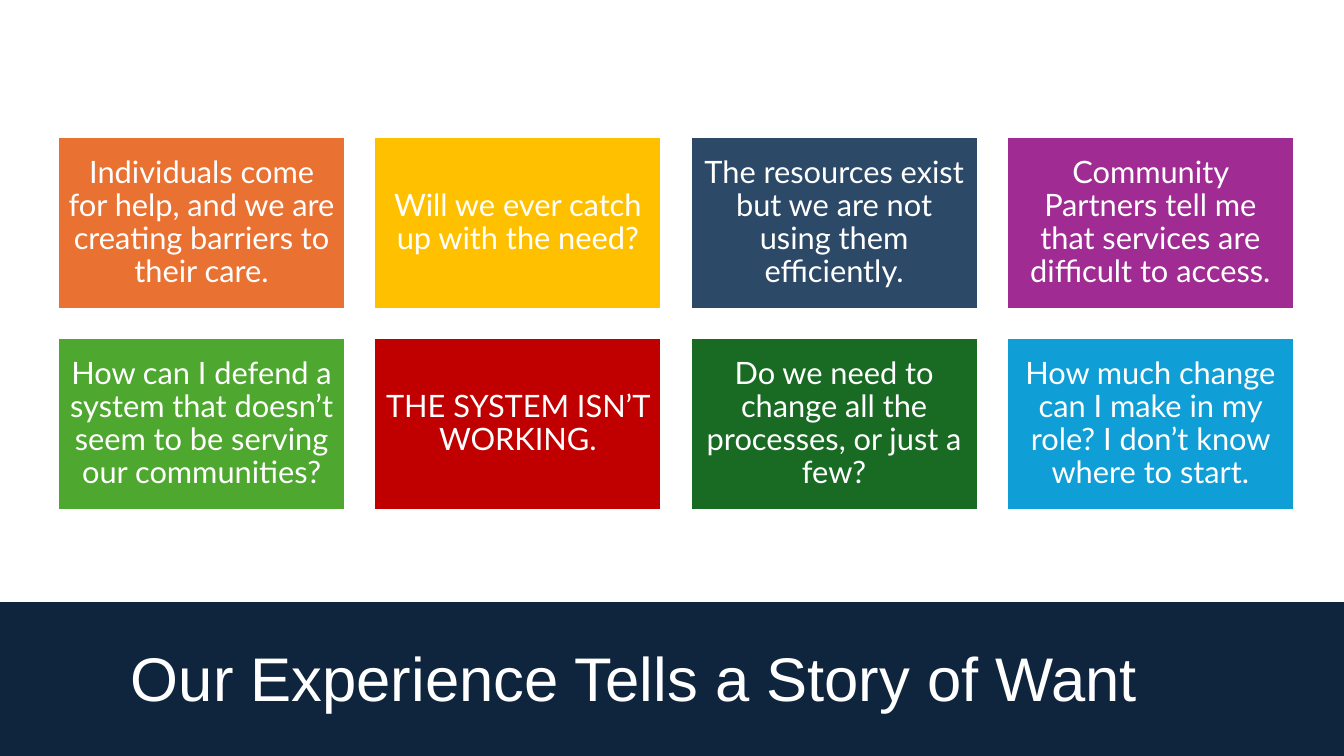
from pptx import Presentation, util as u
from pptx.dml.color import RGBColor
from pptx.enum import shapes, text

PX = 914400 / 100.8  # EMU in one px
SLIDE_W, SLIDE_H = 1344, 756
COLOURS = {
    "navy": "0F253E", "white": "FFFFFF",
    "orange": "E97132", "yellow": "FFC000", "slate": "2C4968", "purple": "A02B93",
    "lime": "4EA72E", "red": "C00000", "forest": "196B24", "sky": "0F9ED5",
}
CONCERNS = [
    ("orange", "Individuals come for help, and we are creating barriers to their care."),
    ("yellow", "Will we ever catch up with the need?"),
    ("slate", "The resources exist but we are not using them efficiently."),
    ("purple", "Community Partners tell me that services are difficult to access."),
    ("lime", "How can I defend a system that doesn’t seem to be serving our communities?"),
    ("red", "THE SYSTEM ISN’T WORKING."),
    ("forest", "Do we need to change all the processes, or just a few?"),
    ("sky", "How much change can I make in my role? I don’t know where to start."),
]


def px(length):
    return u.Emu(round(length * PX))


def colour(name):
    return RGBColor.from_string(COLOURS[name])


def write(shape, words, *, font, size, align, anchor, inset, fill="white"):
    frame = shape.text_frame
    frame.word_wrap = True
    frame.auto_size = text.MSO_AUTO_SIZE.NONE
    frame.vertical_anchor = anchor
    frame.margin_left = frame.margin_right = px(inset)
    frame.margin_top = frame.margin_bottom = px(inset)
    paragraph = frame.paragraphs[0]
    paragraph.alignment = align
    paragraph.line_spacing = 0.9
    run = paragraph.add_run()
    run.text = words
    run.font.name = font
    run.font.size = u.Pt(size)
    run.font.color.rgb = colour(fill)


def add_box(slide, left, top, width, height, fill, line_width):
    box = slide.shapes.add_shape(
        shapes.MSO_SHAPE.RECTANGLE, px(left), px(top), px(width), px(height))
    box.shadow.inherit = False
    box.fill.solid()
    box.fill.fore_color.rgb = colour(fill)
    box.line.color.rgb = colour("white")
    box.line.width = u.Pt(line_width)
    return box


def add_title(slide, left, top, width, height):
    title = slide.shapes.title
    title.left, title.top = px(left), px(top)
    title.width, title.height = px(width), px(height)
    write(title, "Our Experience Tells a Story of Want", font="Arial", size=44,
          align=text.PP_ALIGN.LEFT, anchor=text.MSO_ANCHOR.BOTTOM, inset=10)
    title.text_frame.margin_top = title.text_frame.margin_bottom = px(5)


def add_concerns(slide, left, top, width, height, columns=4, rows=2, gap=29):
    card_w = (width - gap * (columns - 1)) / columns
    card_h = (height - gap * (rows - 1)) / rows
    for index, (fill, words) in enumerate(CONCERNS):
        row, column = divmod(index, columns)
        card = add_box(slide, left + column * (card_w + gap),
                       top + row * (card_h + gap), card_w, card_h, fill, 1.5)
        write(card, words, font="Lato", size=22, align=text.PP_ALIGN.CENTER,
              anchor=text.MSO_ANCHOR.MIDDLE, inset=9)


def main():
    deck = Presentation()
    deck.slide_width, deck.slide_height = px(SLIDE_W), px(SLIDE_H)
    slide = deck.slides.add_slide(deck.slide_layouts[5])

    # Navy background with a white panel above the title
    slide.background.fill.solid()
    slide.background.fill.fore_color.rgb = colour("navy")
    add_box(slide, 0, 0, SLIDE_W, 601, "white", 1)

    # Title and the grid of concerns
    add_title(slide, 121, 621, 1133, 99)
    add_concerns(slide, 58, 137, 1236, 373)

    deck.save("out.pptx")


if __name__ == "__main__":
    main()
